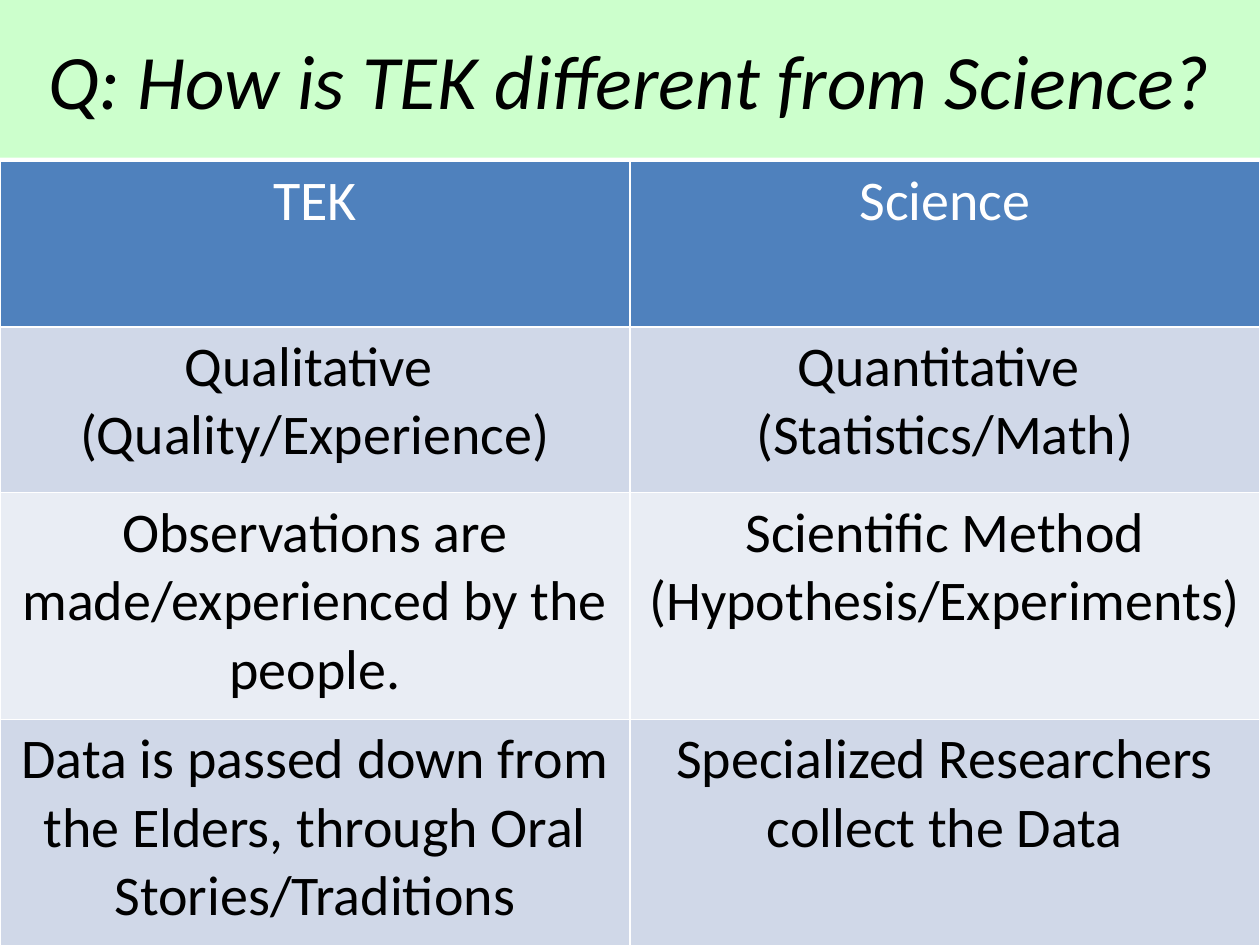
from dataclasses import dataclass

import pptx
import pptx.dml.color
import pptx.enum.text
import pptx.util

Cm = pptx.util.Cm
Pt = pptx.util.Pt
RGBColor = pptx.dml.color.RGBColor
Align = pptx.enum.text.PP_ALIGN
Anchor = pptx.enum.text.MSO_ANCHOR
Fit = pptx.enum.text.MSO_AUTO_SIZE

MINT = RGBColor(0xCC, 0xFF, 0xCC)
BLUE = RGBColor(0x4F, 0x81, 0xBD)
DARK = RGBColor(0xD0, 0xD8, 0xE8)
LIGHT = RGBColor(0xE9, 0xED, 0xF4)
WHITE = RGBColor(0xFF, 0xFF, 0xFF)
BLACK = RGBColor(0x00, 0x00, 0x00)

WIDTH = Cm(25.4)
HEIGHT = Cm(19.05)
TABLE_TOP = Cm(3.25)
SHORT = Cm(3.34)
TALL = Cm(4.57)

TITLE_FONT = {"name": "Calibri", "size": Pt(44), "bold": False, "italic": True}
CELL_FONT = {"name": "Calibri", "size": Pt(32), "bold": False}
TITLE_BOX = {"left": 0, "top": 0, "width": WIDTH, "height": Cm(3.18)}
TITLE_FRAME = {
    "word_wrap": True,
    "auto_size": Fit.NONE,
    "vertical_anchor": Anchor.MIDDLE,
}


@dataclass
class Row:
    texts: tuple[str, str]
    height: int
    fill: RGBColor
    ink: RGBColor = BLACK


ROWS = [
    Row(("TEK", "Science"), SHORT, BLUE, WHITE),
    Row(
        (
            "Qualitative \n(Quality/Experience)",
            "Quantitative \n(Statistics/Math)",
        ),
        SHORT,
        DARK,
    ),
    Row(
        (
            "Observations are made/experienced by the people.",
            "Scientific Method\n(Hypothesis/Experiments)",
        ),
        TALL,
        LIGHT,
    ),
    Row(
        (
            "Data is passed down from the Elders, through Oral Stories/Traditions",
            "Specialized Researchers collect the Data",
        ),
        TALL,
        DARK,
    ),
]


def apply(item: object, values: dict) -> None:
    for name, value in values.items():
        setattr(item, name, value)


def paint(item: object, color: RGBColor) -> None:
    item.fill.solid()
    item.fill.fore_color.rgb = color


def write(frame: object, text: str, style: dict, ink: RGBColor) -> None:
    frame.text = text
    for para in frame.paragraphs:
        para.alignment = Align.CENTER
        for run in para.runs:
            apply(run.font, style)
            run.font.color.rgb = ink


def add_title(slide: object, text: str) -> None:
    title = slide.shapes.title
    apply(title, TITLE_BOX)
    paint(title, MINT)
    apply(title.text_frame, TITLE_FRAME)
    write(title.text_frame, text, TITLE_FONT, BLACK)


def add_grid(slide: object, rows: list[Row]) -> None:
    total = sum(row.height for row in rows)
    count = len(rows[0].texts)
    grid = slide.shapes.add_table(
        len(rows), count, 0, TABLE_TOP, WIDTH, total
    ).table
    for line, row in zip(grid.rows, rows):
        line.height = row.height
        for cell, text in zip(line.cells, row.texts):
            paint(cell, row.fill)
            write(cell.text_frame, text, CELL_FONT, row.ink)


def main() -> None:
    deck = pptx.Presentation()
    apply(deck, {"slide_width": WIDTH, "slide_height": HEIGHT})
    slide = deck.slides.add_slide(deck.slide_layouts[5])
    add_title(slide, "Q: How is TEK different from Science?")
    add_grid(slide, ROWS)
    deck.save("out.pptx")


if __name__ == "__main__":
    main()
